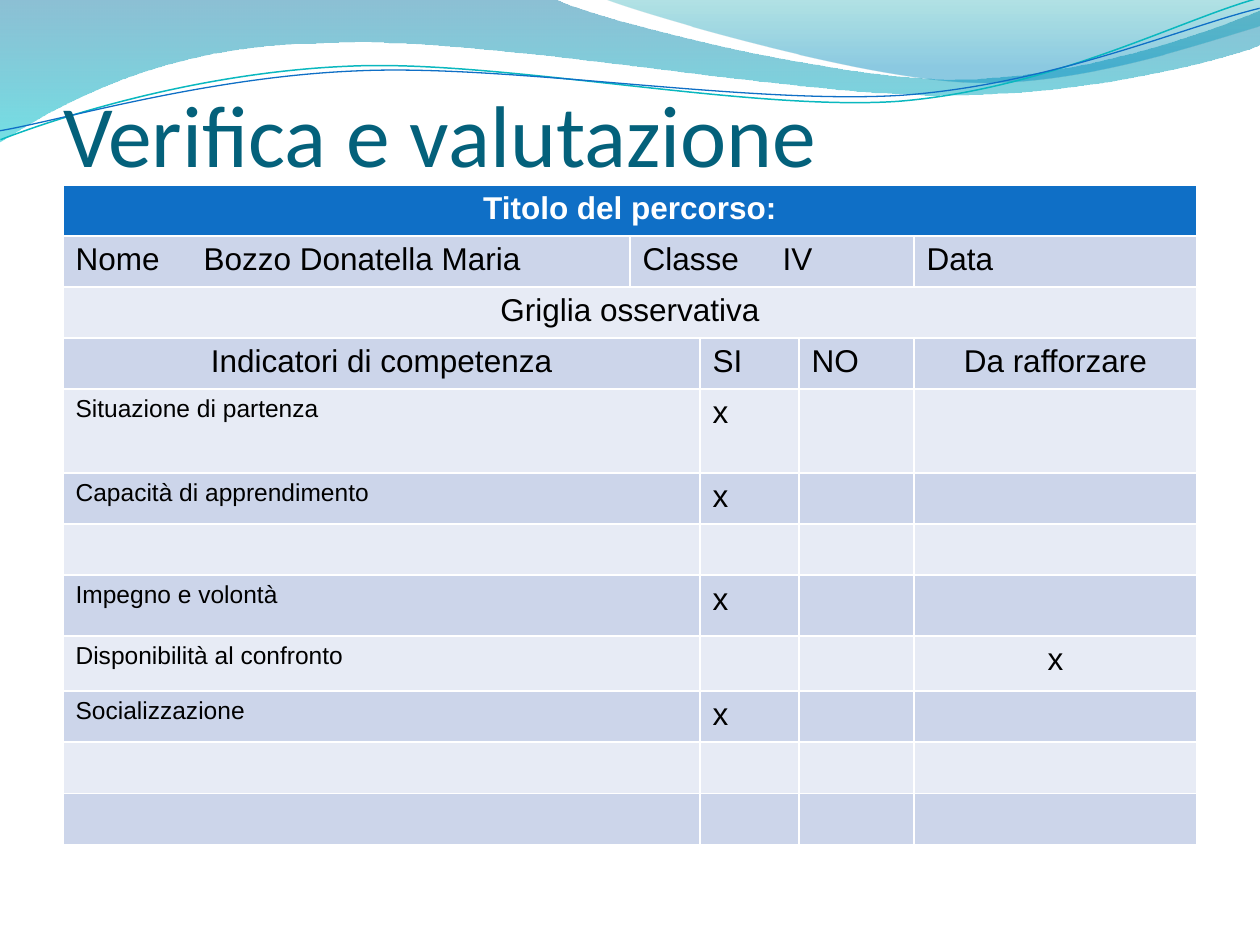
"""Builds the assessment slide: wave header, title and observation grid."""
from dataclasses import dataclass

from lxml import etree
from pptx import Presentation
from pptx.dml.color import RGBColor
from pptx.enum.text import MSO_ANCHOR, MSO_AUTO_SIZE, PP_ALIGN
from pptx.oxml.ns import qn
from pptx.util import Emu, Pt

LEFT, CENTER, JUSTIFY = PP_ALIGN.LEFT, PP_ALIGN.CENTER, PP_ALIGN.JUSTIFY
BOTTOM = MSO_ANCHOR.BOTTOM
NO_AUTOFIT = MSO_AUTO_SIZE.NONE
PX = 914400 / 126


@dataclass(frozen=True)
class Theme:
    title_font: str = "Calibri"
    body_font: str = "Arial"
    title_size: int = 50
    body_size: int = 18
    label_size: int = 14
    title: str = "04617B"
    header: str = "0F6FC6"
    band_dark: str = "CCD5EA"
    band_light: str = "E7EBF5"
    white: str = "FFFFFF"
    black: str = "000000"
    teal_line: str = "0AB8BF"
    wide_wave: tuple = ((0, "0074A1", 45), (1, "00C6CF", 55))
    short_wave: tuple = ((0, "00A1A9", 30), (0.8, "008BBF", 45))


theme = Theme()


def px(length):
    return Emu(round(length * PX))


def add_curve(page, start, segments, closed):
    ends = [segment[-2:] for segment in segments]
    builder = page.shapes.build_freeform(*start, scale=PX)
    builder.add_line_segments(ends, close=closed)
    shape = builder.convert_to_shape()
    shape.shadow.inherit = False
    left = min(x for x, y in [start, *ends])
    top = min(y for x, y in [start, *ends])
    lines = list(shape.element.iter(qn("a:lnTo")))
    for line, segment in zip(lines, segments):
        if len(segment) == 6:
            line.tag = qn("a:cubicBezTo")
            line.clear()
            for x, y in zip(segment[::2], segment[1::2]):
                etree.SubElement(line, qn("a:pt"), x=str(x - left), y=str(y - top))
    return shape


deck = Presentation()
deck.slide_width, deck.slide_height = px(1260), px(945)
page = deck.slides.add_slide(deck.slide_layouts[5])

waves = [
    ((0, -1), [(554, -1), (600, 21, 837, 79, 955, 79), (1075, 79, 1207, 33, 1260, 11),
               (1261, 45), (1238, 55, 1096, 96, 940, 95), (783, 95, 481, 35, 324, 43),
               (163, 44, 58, 105, -1, 142)], theme.wide_wave),
    ((604, -1), [(641, 14, 859, 78, 969, 82), (1079, 87, 1211, 40, 1260, 26),
                 (1260, 0)], theme.short_wave),
]
for start, segments, stops in waves:
    wave = add_curve(page, start, segments, True)
    wave.line.fill.background()
    wave.fill.gradient()
    wave.fill.gradient_angle = 270
    for stop, (position, color, opacity) in zip(wave.fill.gradient_stops, stops):
        stop.position = position
        stop.color.rgb = RGBColor.from_string(color)
    for node, (position, color, opacity) in zip(wave.element.spPr.iter(qn("a:srgbClr")), stops):
        etree.SubElement(node, qn("a:alpha"), val=str(opacity * 1000))

strands = [
    ((-2, 110), [(58, 90, 199, 52, 350, 53), (499, 53, 745, 117, 896, 114),
                 (1049, 109, 1184, 45, 1261, 28)], theme.teal_line, 0.85),
    ((-2, 101), [(57, 94, 207, 57, 357, 58), (509, 58, 750, 111, 902, 108),
                 (1052, 104, 1188, 52, 1262, 38)], theme.header, 0.75),
]
for start, segments, color, width in strands:
    strand = add_curve(page, start, segments, False)
    strand.rotation = 357.3
    strand.fill.background()
    strand.line.color.rgb = RGBColor.from_string(color)
    strand.line.width = Pt(width)

title = page.shapes.title
title.element.getparent().append(title.element)
title.left, title.top, title.width, title.height = px(63), px(75), px(1134), px(110)
frame = title.text_frame
frame.text = "Verifica e valutazione"
frame.auto_size = NO_AUTOFIT
frame.vertical_anchor = BOTTOM
frame.margin_left = frame.margin_right = frame.margin_bottom = 0
frame.margin_top = px(6)
para = frame.paragraphs[0]
para.alignment = LEFT
para.font.name = theme.title_font
para.font.size = Pt(theme.title_size)
para.font.color.rgb = RGBColor.from_string(theme.title)

column_widths = [567, 70, 99, 115, 283]
row_heights = [51, 51, 51, 51, 84, 51, 51, 61, 55, 51, 51, 51]
indicators = [
    ("Situazione di partenza", 2),
    ("Capacità di apprendimento", 2),
    ("", None),
    ("Impegno e volontà", 2),
    ("Disponibilità al confronto", 4),
    ("Socializzazione", 2),
    ("", None),
    ("", None),
]
first_indicator = len(row_heights) - len(indicators)
texts = {
    (0, 0): ("Titolo del percorso:", CENTER),
    (1, 0): ("Nome\tBozzo Donatella Maria", LEFT),
    (1, 1): ("Classe\tIV", LEFT),
    (1, 4): ("Data", LEFT),
    (2, 0): ("Griglia osservativa", CENTER),
    (3, 0): ("Indicatori di competenza", CENTER),
    (3, 2): ("SI", LEFT),
    (3, 3): ("NO", LEFT),
    (3, 4): ("Da rafforzare", CENTER),
}
for row, (label, marked) in enumerate(indicators, first_indicator):
    texts[row, 0] = (label, JUSTIFY)
    if marked:
        texts[row, marked] = ("x", CENTER if marked == 4 else LEFT)
tab_stops = {(1, 0): 128, (1, 1): 140}

table = page.shapes.add_table(
    len(row_heights), len(column_widths), px(63), px(185),
    px(sum(column_widths)), px(sum(row_heights))).table
table.horz_banding = False
for column, width in zip(table.columns, column_widths):
    column.width = px(width)
for table_row, height in zip(table.rows, row_heights):
    table_row.height = px(height)

for row in range(len(row_heights)):
    for column in range(len(column_widths)):
        cell = table.cell(row, column)
        band = theme.band_dark if row % 2 else theme.band_light
        cell.fill.solid()
        cell.fill.fore_color.rgb = RGBColor.from_string(band if row else theme.header)
        if (row, column) not in texts:
            continue
        text, alignment = texts[row, column]
        para = cell.text_frame.paragraphs[0]
        para.text = text
        para.alignment = alignment
        para.font.name = theme.body_font
        para.font.size = Pt(theme.label_size if alignment == JUSTIFY and text else theme.body_size)
        para.font.bold = row == 0
        para.font.color.rgb = RGBColor.from_string(theme.black if row else theme.white)
        if (row, column) in tab_stops:
            stops = etree.Element(qn("a:tabLst"))
            etree.SubElement(stops, qn("a:tab"), pos=str(px(tab_stops[row, column])), algn="l")
            para._p.pPr.insert(0, stops)

merges = [(0, 0, 4), (1, 1, 3), (2, 0, 4)]
merges += [(row, 0, 1) for row in range(3, len(row_heights))]
for row, first, last in merges:
    table.cell(row, first).merge(table.cell(row, last))

deck.save("out.pptx")
